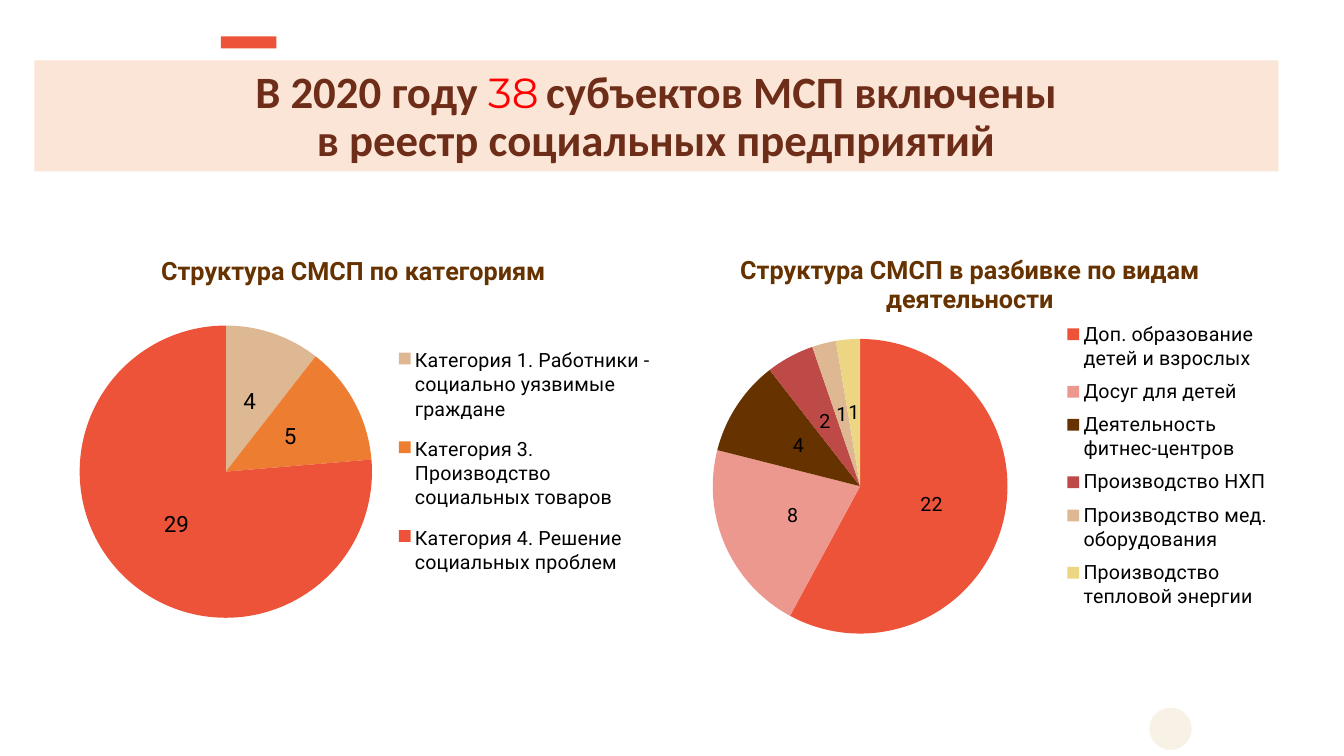
from dataclasses import dataclass

from lxml import etree
from pptx import Presentation
from pptx.chart.data import CategoryChartData
from pptx.dml.color import RGBColor
from pptx.enum.chart import XL_CHART_TYPE, XL_LABEL_POSITION, XL_LEGEND_POSITION
from pptx.enum.shapes import MSO_SHAPE
from pptx.enum.text import MSO_ANCHOR, PP_ALIGN
from pptx.util import Inches, Pt

PIE = XL_CHART_TYPE.PIE
MIDDLE = XL_LABEL_POSITION.CENTER
RIGHT = XL_LEGEND_POSITION.RIGHT
RECT, OVAL = MSO_SHAPE.RECTANGLE, MSO_SHAPE.OVAL
BOTTOM, CENTER = MSO_ANCHOR.BOTTOM, PP_ALIGN.CENTER
CHART_NS = "http://schemas.openxmlformats.org/drawingml/2006/chart"


@dataclass(frozen=True)
class Theme:
    """Colours, fonts and type sizes of the slide."""
    red: str = "ED5338"
    sand: str = "DDB893"
    orange: str = "ED7D31"
    pink: str = "ED988F"
    brown: str = "663300"
    wine: str = "BD4A47"
    straw: str = "ECD684"
    cream: str = "F7F2E5"
    peach: str = "FBE5D6"
    rust: str = "6D2D19"
    alert: str = "FF0000"
    black: str = "000000"
    head_font: str = "Calibri"
    count_font: str = "Montserrat"
    body_font: str = "Roboto"
    head: int = 32
    count: int = 30
    title: int = 18
    legend: int = 14


THEME = Theme()

GROUPS = [
    ("Категория 1. Работники - социально уязвимые граждане", 4, THEME.sand),
    ("Категория 3. Производство социальных товаров", 5, THEME.orange),
    ("Категория 4. Решение социальных проблем", 29, THEME.red),
]
FIELDS = [
    ("Доп. образование детей и взрослых", 22, THEME.red),
    ("Досуг для детей", 8, THEME.pink),
    ("Деятельность фитнес-центров", 4, THEME.brown),
    ("Производство НХП", 2, THEME.wine),
    ("Производство мед. оборудования", 1, THEME.sand),
    ("Производство тепловой энергии", 1, THEME.straw),
]


def style(font, face, size, color, bold=False):
    """Set the look of a font."""
    font.name, font.size, font.bold = face, Pt(size), bold
    font.color.rgb = RGBColor.from_string(color)


def block(slide, kind, box, color):
    """Add a plain filled shape in the box."""
    shape = slide.shapes.add_shape(kind, *map(Inches, box))
    shape.shadow.inherit = False
    shape.fill.solid()
    shape.fill.fore_color.rgb = RGBColor.from_string(color)
    shape.line.fill.background()
    return shape


def banner(slide, box):
    """Add the heading band with its accent bar above."""
    left, top, width, _ = box
    block(slide, RECT, (left + 0.15 * width, top - 0.24, 0.55, 0.12), THEME.red)
    frame = block(slide, RECT, box, THEME.peach).text_frame
    frame.word_wrap = True
    frame.vertical_anchor = BOTTOM
    frame.margin_left = frame.margin_right = Inches(0.05)
    para = frame.paragraphs[0]
    para.alignment, para.line_spacing = CENTER, 0.9
    words = (THEME.head_font, THEME.head, THEME.rust, True)
    number = (THEME.count_font, THEME.count, THEME.alert)
    space = ("Cambria", 24, THEME.black, True)
    for text, look in [
        ("В 2020 году ", words),
        ("38", number),
        (" ", space),
        ("субъектов МСП включены", words),
        (None, None),
        ("в реестр социальных предприятий", words),
    ]:
        if text is None:
            para.add_line_break()
            continue
        run = para.add_run()
        run.text = text
        style(run.font, *look)


def place(parent, index, area, inner=False):
    """Fix a chart part at shares of the chart's size."""
    for old in parent.findall(f"{{{CHART_NS}}}layout"):
        parent.remove(old)
    layout = etree.Element(f"{{{CHART_NS}}}layout")
    manual = etree.SubElement(layout, f"{{{CHART_NS}}}manualLayout")
    pairs = [("layoutTarget", "inner")] if inner else []
    pairs += [("xMode", "edge"), ("yMode", "edge"), *zip("xywh", area)]
    for tag, value in pairs:
        etree.SubElement(manual, f"{{{CHART_NS}}}{tag}", val=str(value))
    parent.insert(index, layout)


def pie(slide, box, title, rows, size, plot_area, key_area):
    """Add a titled pie with value labels and a legend."""
    data = CategoryChartData()
    data.categories = [name for name, _, _ in rows]
    data.add_series("Series 1", [value for _, value, _ in rows])
    chart = slide.shapes.add_chart(PIE, *map(Inches, box), data).chart
    style(chart.font, THEME.body_font, 10, THEME.black)

    para = chart.chart_title.text_frame.paragraphs[0]
    para.text = title
    style(para.font, THEME.body_font, THEME.title, THEME.brown, True)

    chart.has_legend = True
    legend = chart.legend
    legend.position, legend.include_in_layout = RIGHT, False
    style(legend.font, THEME.body_font, THEME.legend, THEME.black)
    place(legend._element, 1, key_area)

    plot = chart.plots[0]
    plot.vary_by_categories = True
    place(plot._element.getparent(), 0, plot_area, True)
    series = plot.series[0]
    for index, (_, _, color) in enumerate(rows):
        fill = series.points[index].format.fill
        fill.solid()
        fill.fore_color.rgb = RGBColor.from_string(color)
    labels = series.data_labels
    labels.show_value, labels.position = True, MIDDLE
    style(labels.font, THEME.body_font, size, THEME.black)


def main():
    """Build the slide and save it."""
    deck = Presentation()
    deck.slide_width, deck.slide_height = Inches(13.33), Inches(7.5)
    slide = deck.slides.add_slide(deck.slide_layouts[6])
    block(slide, OVAL, (11.4, 7.02, 0.42, 0.42), THEME.cream)
    banner(slide, (0.34, 0.6, 12.34, 1.1))
    pie(slide, (0.42, 2.34, 6.17, 4), "Структура СМСП по категориям",
        GROUPS, 16, (0.06, 0.19, 0.47, 0.79), (0.56, 0.24, 0.43, 0.64))
    pie(slide, (6.51, 2.33, 6.22, 4.09),
        "Структура СМСП в разбивке по видам деятельности",
        FIELDS, 14, (0.09, 0.25, 0.47, 0.72), (0.64, 0.19, 0.35, 0.74))
    deck.save("out.pptx")


if __name__ == "__main__":
    main()
